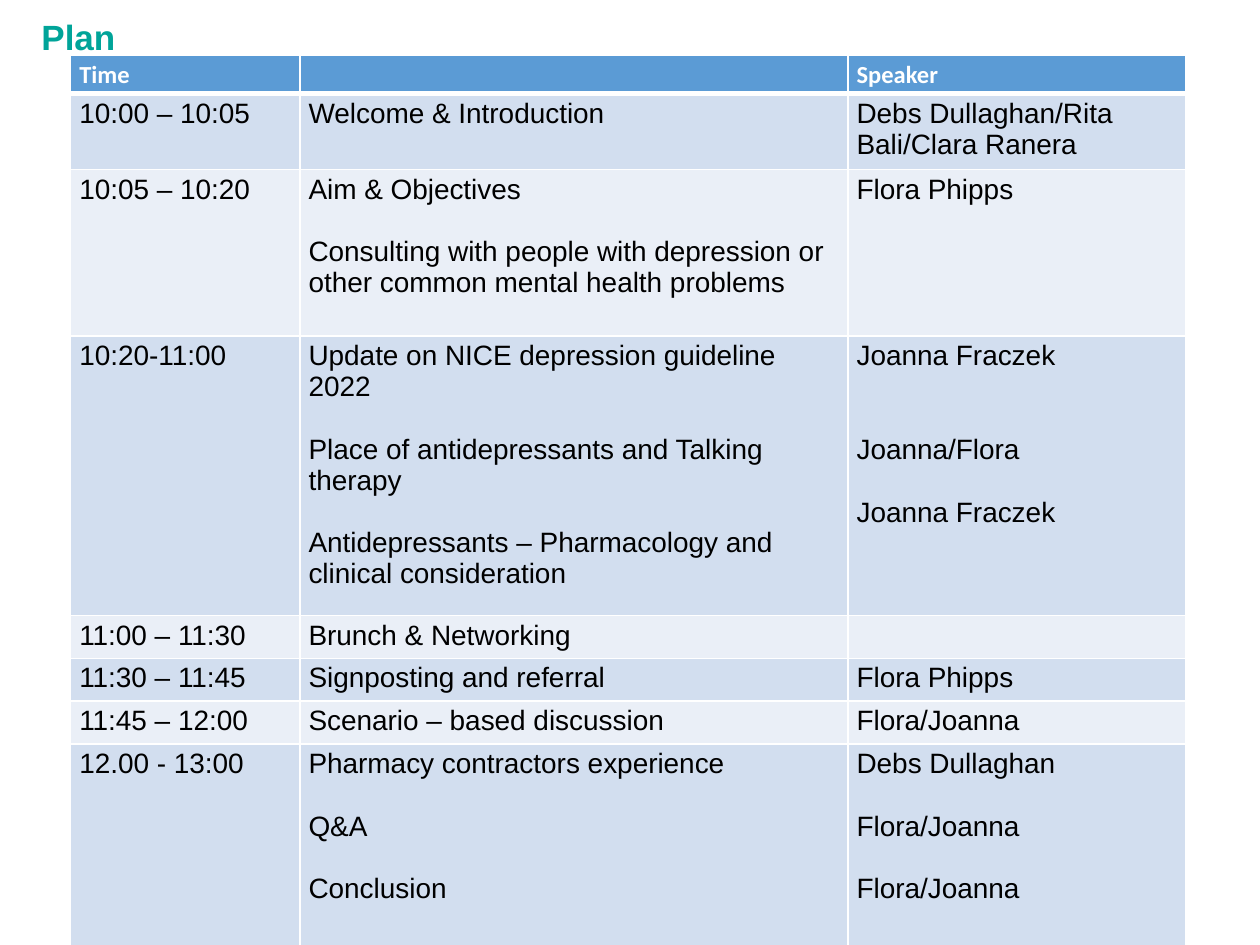
from lxml.etree import SubElement as Sub
from pptx import Presentation as Deck
from pptx.dml.color import RGBColor as Rgb
from pptx.enum.text import MSO_ANCHOR as Anchor
from pptx.oxml.ns import qn
from pptx.util import Inches as In, Pt

HUES = {"title": "00A499", "head": "5B9BD5", "odd": "D2DEEF",
        "even": "EAEFF7", "text": "000000", "line": "FFFFFF"}
COLS = [1.82, 4.35, 2.68]
ROWS = [0.3, 0.6, 1.32, 2.22, 0.34, 0.34, 0.34, 1.69]
LINE = 18  # height of one line of body text, in points

# A cell is a list of (text, lines left free above it)
PLAN = [
    [[("Time", 0)], [("", 0)], [("Speaker", 0)]],
    [[("10:00 – 10:05", 0)], [("Welcome & Introduction", 0)],
     [("Debs Dullaghan/Rita Bali/Clara Ranera", 0)]],
    [[("10:05 – 10:20", 0)],
     [("Aim & Objectives", 0),
      ("Consulting with people with depression or other common "
       "mental health problems", 1)],
     [("Flora Phipps", 0)]],
    [[("10:20-11:00", 0)],
     [("Update on NICE depression guideline 2022", 0),
      ("Place of antidepressants and Talking therapy", 1),
      ("Antidepressants – Pharmacology and clinical consideration", 1)],
     [("Joanna Fraczek", 0), ("Joanna/Flora", 2), ("Joanna Fraczek", 1)]],
    [[("11:00 – 11:30", 0)], [("Brunch & Networking", 0)], [("", 0)]],
    [[("11:30 – 11:45", 0)], [("Signposting and referral", 0)],
     [("Flora Phipps", 0)]],
    [[("11:45 – 12:00", 0)], [("Scenario – based discussion", 0)],
     [("Flora/Joanna", 0)]],
    [[("12.00 - 13:00", 0)],
     [("Pharmacy contractors experience", 0), ("Q&A", 1), ("Conclusion", 1)],
     [("Debs Dullaghan", 0), ("Flora/Joanna", 1), ("Flora/Joanna", 1)]],
]


def style(para, size, hue, face="Arial", bold=False):
    font = para.font
    font.size, font.name, font.bold = Pt(size), face, bold
    font.color.rgb = Rgb.from_string(HUES[hue])


def pad(box):
    box.margin_left = box.margin_right = Pt(5)
    box.margin_top = box.margin_bottom = Pt(2.5)


def edge(cell, base):
    """Draw the four borders; base is the width of the bottom one."""
    props = cell._tc.get_or_add_tcPr()
    for side, width in (("L", 1), ("R", 1), ("T", 1), ("B", base)):
        line = Sub(props, qn(f"a:ln{side}"), w=str(Pt(width)))
        fill = Sub(line, qn("a:solidFill"))
        Sub(fill, qn("a:srgbClr"), val=HUES["line"])


def fill_cell(cell, parts, head, hue):
    pad(cell)
    cell.vertical_anchor = Anchor.TOP
    edge(cell, 3 if head else 1)
    cell.fill.solid()
    cell.fill.fore_color.rgb = Rgb.from_string(HUES[hue])
    frame = cell.text_frame
    for i, (text, gap) in enumerate(parts):
        para = frame.add_paragraph() if i else frame.paragraphs[0]
        if text:
            para.text = text
        if gap:
            para.space_before = Pt(gap * LINE)
        if head:
            style(para, 14, "line", "Calibri", True)
        else:
            style(para, 16, "text")
        if not text:  # an empty cell takes its height from the end mark
            Sub(para._p, qn("a:endParaRPr"), sz=str(para.font.size.centipoints))


def add_title(slide):
    frame = slide.shapes.add_textbox(In(0.26), In(0.09), In(6.87), In(0.41)).text_frame
    pad(frame)
    frame.word_wrap = True
    para = frame.paragraphs[0]
    para.text = "Plan"
    style(para, 20, "title", bold=True)


def add_plan(slide):
    table = slide.shapes.add_table(len(ROWS), len(COLS), In(0.56), In(0.44),
                                   In(sum(COLS)), In(sum(ROWS))).table
    for col, width in zip(table.columns, COLS):
        col.width = In(width)
    for r, (row, high) in enumerate(zip(table.rows, ROWS)):
        row.height = In(high)
        hue = "odd" if r % 2 else "even" if r else "head"
        for cell, parts in zip(row.cells, PLAN[r]):
            fill_cell(cell, parts, r == 0, hue)


def main():
    deck = Deck()
    deck.slide_width, deck.slide_height = In(10), In(7.5)
    slide = deck.slides.add_slide(deck.slide_layouts[6])
    add_title(slide)
    add_plan(slide)
    deck.save("out.pptx")


if __name__ == "__main__":
    main()
